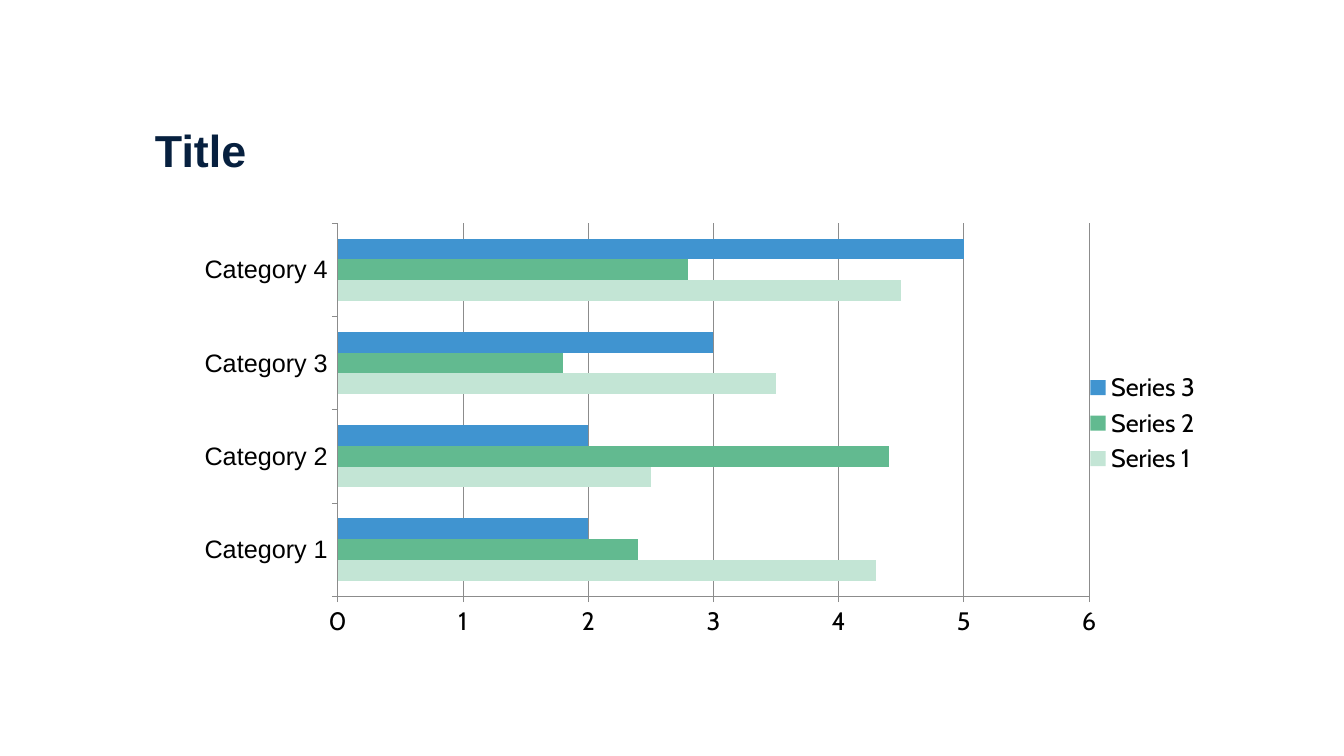
from dataclasses import dataclass

from lxml import etree
from pptx import Presentation
from pptx import util as u
from pptx.chart import data as cd
from pptx.dml.color import RGBColor as Rgb
from pptx.enum import chart as ce
from pptx.enum import text as te
from pptx.oxml import ns

PX = u.Inches(1) // 96


@dataclass(frozen=True)
class Theme:
    head: str = "Arial"
    body: str = "Cabin"
    navy: str = "07203F"
    ink: str = "000000"
    rule: str = "8C8C8C"
    bars: tuple = ("C3E5D5", "62BA90", "4094D0")
    big: int = 32
    text: int = 18
    thin: float = 0.5


LOOK = Theme()

CATS = ["Category 1", "Category 2", "Category 3", "Category 4"]
ROWS = {
    "Series 1": (4.3, 2.5, 3.5, 4.5),
    "Series 2": (2.4, 4.4, 1.8, 2.8),
    "Series 3": (2, 2, 3, 5),
}


def style(font, face, size, color, bold=False):
    font.name = face
    font.size = u.Pt(size)
    font.bold = bold
    font.color.rgb = Rgb.from_string(color)


def rule(line):
    line.color.rgb = Rgb.from_string(LOOK.rule)
    line.width = u.Pt(LOOK.thin)


def title(slide, box, words):
    shape = slide.shapes.title
    shape.left, shape.top, shape.width, shape.height = (n * PX for n in box)
    frame = shape.text_frame
    frame.word_wrap = True
    frame.auto_size = te.MSO_AUTO_SIZE.SHAPE_TO_FIT_TEXT
    frame.vertical_anchor = te.MSO_ANCHOR.TOP
    para = frame.paragraphs[0]
    para.alignment = te.PP_ALIGN.LEFT
    run = para.add_run()
    run.text = words
    style(run.font, LOOK.head, LOOK.big, LOOK.navy, True)


def place(chart, x, y, w, h):
    """Fix the inner plot area, in fractions of the chart."""
    area = chart.plots[0]._element.getparent()
    for old in area.findall(ns.qn("c:layout")):
        area.remove(old)
    layout = etree.Element(ns.qn("c:layout"))
    area.insert(0, layout)
    manual = etree.SubElement(layout, ns.qn("c:manualLayout"))
    parts = dict(layoutTarget="inner", xMode="edge", yMode="edge", x=x, y=y, w=w, h=h)
    for tag, val in parts.items():
        etree.SubElement(manual, ns.qn("c:" + tag)).set("val", str(val))


def bars(slide, box):
    data = cd.CategoryChartData()
    data.categories = CATS
    for name, vals in ROWS.items():
        data.add_series(name, vals)
    kind = ce.XL_CHART_TYPE.BAR_CLUSTERED
    chart = slide.shapes.add_chart(kind, *(n * PX for n in box), data).chart
    chart.has_title = False
    style(chart.font, LOOK.body, LOOK.text, LOOK.ink)
    place(chart, 0.166, 0.051, 0.717, 0.838)

    # Bars
    plot = chart.plots[0]
    plot.gap_width = 150
    plot.overlap = 0
    plot.vary_by_categories = False
    for row, color in zip(plot.series, LOOK.bars):
        row.invert_if_negative = False
        row.format.fill.solid()
        row.format.fill.fore_color.rgb = Rgb.from_string(color)

    # Axes and grid
    for axis, face in ((chart.category_axis, LOOK.head), (chart.value_axis, LOOK.body)):
        axis.major_tick_mark = ce.XL_TICK_MARK.OUTSIDE
        axis.minor_tick_mark = ce.XL_TICK_MARK.NONE
        style(axis.tick_labels.font, face, LOOK.text, LOOK.ink)
        rule(axis.format.line)
    scale = chart.value_axis
    scale.minimum_scale, scale.maximum_scale, scale.major_unit = 0, 6, 1
    scale.has_major_gridlines = True
    rule(scale.major_gridlines.format.line)

    # Legend
    chart.has_legend = True
    chart.legend.position = ce.XL_LEGEND_POSITION.RIGHT
    chart.legend.include_in_layout = False
    style(chart.legend.font, LOOK.body, LOOK.text, LOOK.ink)


def main():
    deck = Presentation()
    deck.slide_width, deck.slide_height = 1280 * PX, 720 * PX
    slide = deck.slides.add_slide(deck.slide_layouts[5])
    title(slide, (138, 112, 637, 61), "Title")
    bars(slide, (156, 191, 998, 424))
    deck.save("out.pptx")


if __name__ == "__main__":
    main()
